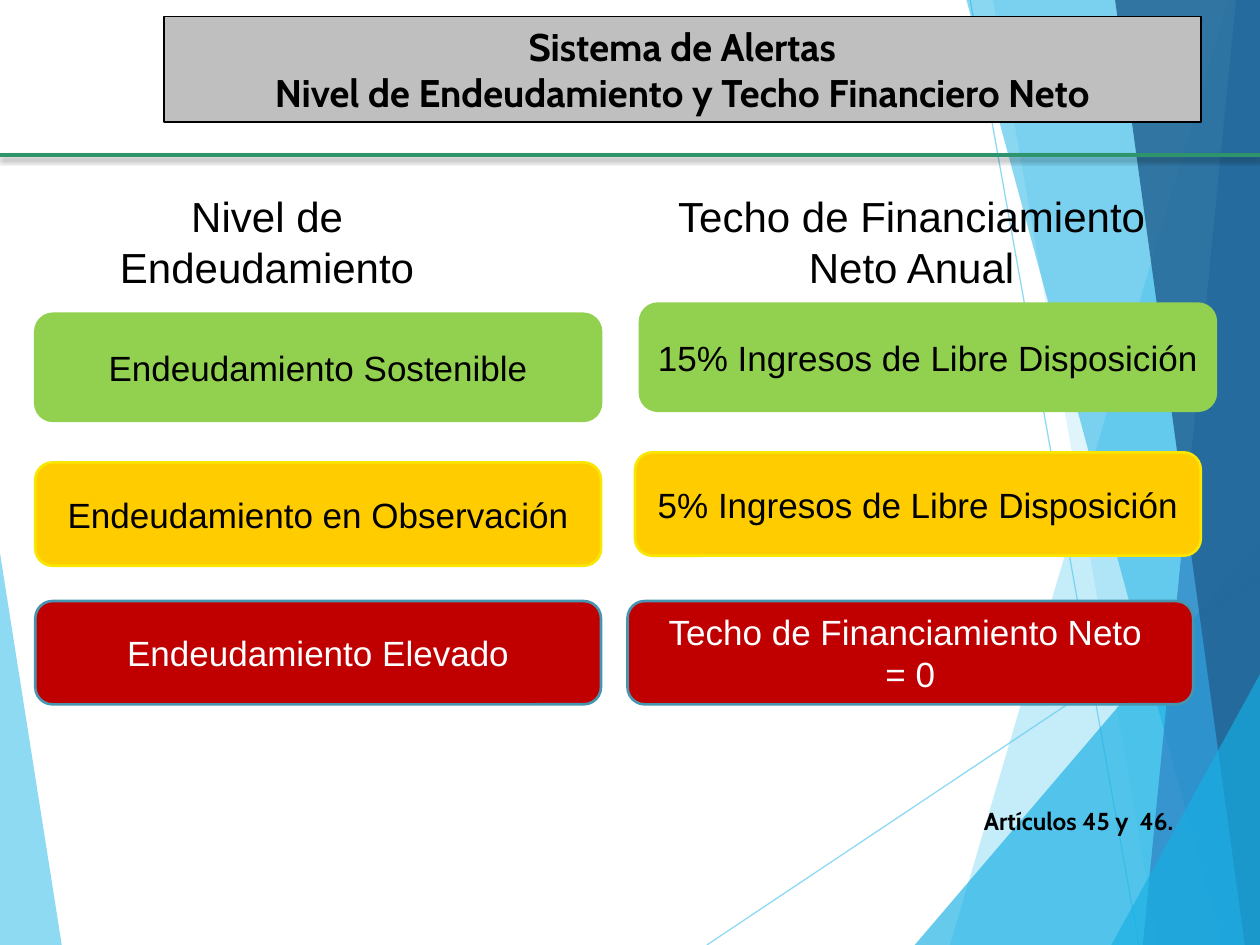
import pptx
import pptx.util
import pptx.dml.color
import pptx.enum.shapes
import pptx.enum.text
import pptx.oxml
import pptx.oxml.ns
from pptx.util import Inches

RECT = pptx.enum.shapes.MSO_SHAPE.ROUNDED_RECTANGLE
STRAIGHT = pptx.enum.shapes.MSO_CONNECTOR.STRAIGHT
MIDDLE = pptx.enum.text.MSO_ANCHOR.MIDDLE
TOP = pptx.enum.text.MSO_ANCHOR.TOP
CENTER = pptx.enum.text.PP_ALIGN.CENTER
LEFT = pptx.enum.text.PP_ALIGN.LEFT
NS = pptx.oxml.ns.nsdecls("a")


def rgb(color):
    return pptx.dml.color.RGBColor.from_string(color)


class AlertSlide:
    heading_font = "Cabin"
    body_font = "Arial"

    def __init__(self, slide):
        self.slide = slide
        self.shapes = slide.shapes

    def set_alpha(self, element, percent):
        for color in element.iter(pptx.oxml.ns.qn("a:srgbClr")):
            color.append(pptx.oxml.parse_xml(
                f'<a:alpha {NS} val="{percent * 1000}"/>'))

    def set_text(self, shape, text, size, font, color="000000", bold=False,
                 align=CENTER, anchor=MIDDLE):
        frame = shape.text_frame
        frame.text = text
        frame.word_wrap = True
        frame.vertical_anchor = anchor
        for paragraph in frame.paragraphs:
            paragraph.alignment = align
            for run in paragraph.runs:
                run.font.size = pptx.util.Pt(size)
                run.font.name = font
                run.font.bold = bold
                run.font.color.rgb = rgb(color)

    def paint(self, shape, fill, line=None, width=1.5):
        if fill:
            shape.fill.solid()
            shape.fill.fore_color.rgb = rgb(fill)
        else:
            shape.fill.background()
        if line:
            shape.line.color.rgb = rgb(line)
            shape.line.width = pptx.util.Pt(width)
        else:
            shape.line.fill.background()

    def facet(self, points, fill, alpha):
        corners = [(Inches(x), Inches(y)) for x, y in points]
        builder = self.shapes.build_freeform(*corners[0], scale=1.0)
        builder.add_line_segments(corners[1:], close=True)
        shape = builder.convert_to_shape()
        shape.shadow.inherit = False
        self.paint(shape, fill)
        self.set_alpha(shape._element.spPr, alpha)

    def line(self, start, end, color, width, alpha=100, shadow=""):
        connector = self.shapes.add_connector(
            STRAIGHT, *(Inches(v) for v in start + end))
        connector.line.color.rgb = rgb(color)
        connector.line.width = pptx.util.Pt(width)
        if alpha < 100:
            self.set_alpha(connector._element.spPr, alpha)
        connector._element.spPr.append(pptx.oxml.parse_xml(
            f"<a:effectLst {NS}>{shadow}</a:effectLst>"))

    def title(self, box, text):
        title = self.shapes.title
        # Bring the title in front of the background facets
        self.shapes._spTree.append(title._element)
        title.left, title.top, title.width, title.height = map(Inches, box)
        self.paint(title, "BFBFBF", "000000", 1)
        self.set_text(title, text, 22, self.heading_font, bold=True, anchor=TOP)

    def note(self, box, text):
        note = self.shapes.add_textbox(*map(Inches, box))
        self.set_text(note, text, 14, self.heading_font, bold=True,
                      align=LEFT, anchor=TOP)

    def box(self, box, text, size=20, fill=None, line=None, color="000000"):
        shape = self.shapes.add_shape(RECT, *map(Inches, box))
        shape.shadow.inherit = False
        self.paint(shape, fill, line)
        self.set_text(shape, text, size, self.body_font, color)


def main():
    deck = pptx.Presentation()
    deck.slide_width, deck.slide_height = Inches(10), Inches(7.5)
    page = AlertSlide(deck.slides.add_slide(deck.slide_layouts[5]))

    # Background facets and thin rays
    sky, cyan = "5FCBEF", "17B0E4"
    page.facet([(0, 4.39), (0.49, 7.5), (0, 7.5)], sky, 70)
    page.line((5.61, 7.5), (10, 4.57), sky, 0.75, 70)
    page.line((7.7, 0), (9.04, 7.5), sky, 0.75, 70)
    facets = [
        ([(9.75, 0), (7.54, 7.5), (10, 7.5), (10, 0)], sky, 36),
        ([(7.88, 0), (9.19, 7.5), (10, 7.5), (10, 0)], sky, 20),
        ([(7.26, 7.5), (10, 4.29), (10, 7.5)], cyan, 66),
        ([(7.67, 0), (9.7, 7.5), (10, 7.5), (10, 0)], cyan, 50),
        ([(9.81, 0), (9.07, 7.5), (10, 7.5), (10, 0)], "2E83C3", 70),
        ([(8.85, 0), (9.88, 7.5), (10, 7.5), (10, 0)], "226292", 82),
        ([(8.82, 7.5), (10, 5.35), (10, 7.5)], cyan, 66),
    ]
    for points, fill, alpha in facets:
        page.facet(points, fill, alpha)

    # Header rule, title and legal reference
    rule_shadow = ('<a:outerShdw blurRad="38100" dist="25400" dir="5400000" '
                   'rotWithShape="0"><a:srgbClr val="000000">'
                   '<a:alpha val="35000"/></a:srgbClr></a:outerShdw>')
    page.line((0, 1.23), (10, 1.23), "2E946B", 2, shadow=rule_shadow)
    page.title((1.3, 0.13, 8.23, 0.84),
               "Sistema de Alertas\n"
               "Nivel de Endeudamiento y Techo Financiero Neto")
    page.note((7.71, 6.35, 2.84, 0.34), "Artículos 45 y  46.")

    # Column headings
    page.box((0.27, 1.49, 3.7, 0.85), "Nivel de Endeudamiento", 24)
    page.box((5.14, 1.49, 4.19, 0.85), "Techo de Financiamiento Neto Anual", 24)

    # Alert levels: debt level on the left, its financing ceiling on the right
    green = ("92D050", "92D050", "000000")
    yellow = ("FFCC00", "F9E701", "000000")
    red = ("C00000", "4696B1", "FFFFFF")
    levels = [
        (green, 0.85, 2.49, "Endeudamiento Sostenible",
         (5.08, 2.41, 4.57), "15% Ingresos de Libre Disposición"),
        (yellow, 0.82, 3.67, "Endeudamiento en Observación",
         (5.04, 3.59, 4.49), "5% Ingresos de Libre Disposición"),
        (red, 0.82, 4.77, "Endeudamiento Elevado",
         (4.98, 4.77, 4.49), "Techo de Financiamiento Neto \n= 0"),
    ]
    for colors, height, top, debt, ceiling_place, ceiling in levels:
        page.box((0.28, top, 4.49, height), debt, 20, *colors)
        page.box((*ceiling_place, height), ceiling, 20, *colors)

    deck.save("out.pptx")


if __name__ == "__main__":
    main()
